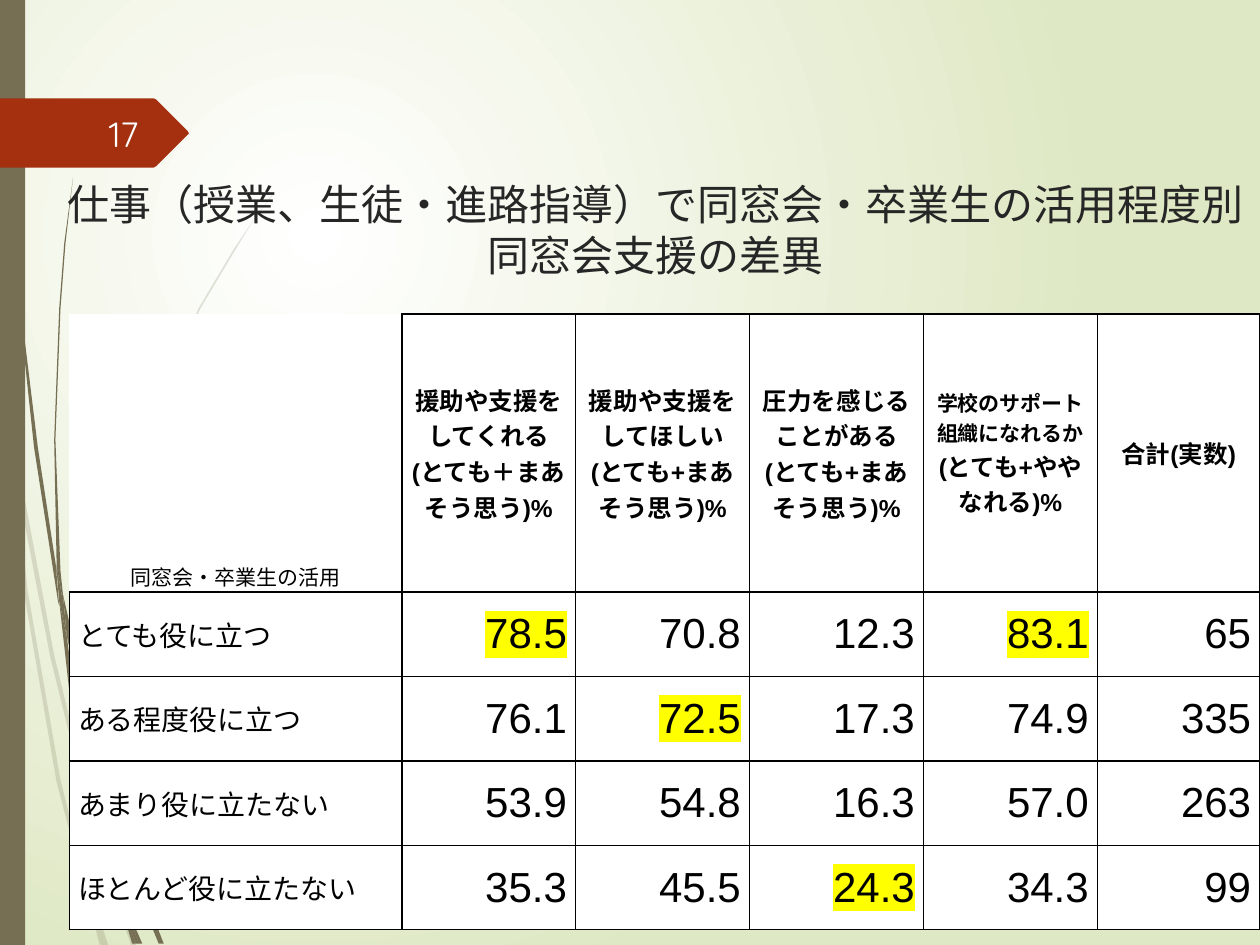
from lxml import etree
from pptx import Presentation
from pptx.dml.color import RGBColor
from pptx.enum import shapes, text
from pptx.oxml.ns import qn
from pptx.util import Pt

WHITE = RGBColor(0xFF, 0xFF, 0xFF)
BLACK = RGBColor(0x00, 0x00, 0x00)
PALE_GREEN = RGBColor(0xDF, 0xE8, 0xC4)
OLIVE = RGBColor(0x76, 0x6F, 0x54)
RUST = RGBColor(0xA5, 0x30, 0x10)
CHARCOAL = RGBColor(0x26, 0x26, 0x26)
NUMBER_WHITE = RGBColor(0xFE, 0xFF, 0xFF)
YELLOW = RGBColor(0xFF, 0xFF, 0x00)

GRID = Pt(0.72)  # outline points are counted in steps of 0.72 pt
FONT = "Arial"

PALE_WISPS = [
    [(8, 350), (6, 322), (0, 282), (0, 299), (7, 344)],
    [(40, 522), (59, 599), (59, 586), (43, 520), (10, 345), (12, 376)],
    [(64, 607), (61, 596), (61, 610), (85, 694), (104, 750), (108, 750), (88, 692)],
    [(83, 750), (86, 750), (73, 711)],
    [(64, 683), (48, 619), (22, 469), (12, 376), (8, 350), (19, 470), (45, 621),
     (64, 693), (70, 714), (69, 707)],
    [(58, 599), (60, 646), (64, 683), (67, 692), (73, 711), (72, 706), (63, 646),
     (61, 610), (61, 608)],
    [(61, 584), (76, 462), (111, 349), (159, 245), (187, 198), (201, 175), (217, 154),
     (217, 153), (201, 175), (186, 197), (158, 244), (110, 348), (75, 461), (59, 584),
     (59, 586), (61, 596)],
    [(70, 714), (79, 750), (82, 750)],
    [(61, 608), (61, 610), (61, 596), (59, 586), (58, 599)],
    [(67, 692), (65, 683), (69, 707), (70, 714), (82, 750), (83, 750), (73, 711)],
]
SOLID_WISPS = [
    [(5, 110), (14, 233), (27, 355), (46, 477), (47, 481), (45, 457), (45, 453), (30, 355),
     (15, 232), (6, 109), (4, 48), (3, 0), (2, 0), (3, 48)],
    [(73, 592), (88, 645), (88, 633), (88, 631), (77, 590), (50, 472), (53, 505)],
    [(94, 649), (91, 641), (91, 656), (109, 708), (126, 749), (130, 749), (113, 706)],
    [(91, 691), (81, 657), (60, 556), (53, 505), (47, 477), (56, 557), (77, 659),
     (92, 708), (97, 722), (96, 717)],
    [(50, 472), (48, 453), (44, 349), (48, 245), (52, 193), (58, 141), (51, 193),
     (47, 245), (43, 349), (45, 449), (49, 472)],
    [(110, 749), (113, 749), (100, 719)],
    [(47, 477), (53, 505), (50, 472), (49, 472), (45, 449), (45, 453)],
    [(91, 633), (103, 552), (131, 476), (169, 406), (191, 374), (203, 359), (216, 344),
     (215, 344), (203, 358), (191, 373), (168, 405), (129, 474), (101, 551), (88, 631),
     (91, 641)],
    [(97, 722), (105, 749), (108, 749)],
    [(88, 645), (91, 691), (96, 706), (100, 719), (100, 716), (91, 656), (90, 651)],
    [(88, 645), (90, 651), (91, 656), (91, 641), (88, 631), (88, 633)],
    [(96, 706), (91, 691), (96, 717), (97, 722), (108, 749), (110, 749), (100, 719)],
]
NUMBER_TAG = [(0, 0), (122, 0), (124, 1), (149, 26), (149.5, 27.5), (149, 29),
              (124, 54), (122, 55), (0, 55)]

HEADERS = [
    [("援助や支援をしてくれる\v(とても＋まあそう思う)%", 14)],
    [("援助や支援をしてほしい\v(とても+まあそう思う)%", 14)],
    [("圧力を感じることがある\v(とても+まあそう思う)%", 14)],
    [("学校のサポート組織になれるか\v", 12), ("(とても+ややなれる)%", 14)],
    [("合計(実数)", 14)],
]
ROWS = [
    ("とても役に立つ", "78.5", "70.8", "12.3", "83.1", "65"),
    ("ある程度役に立つ", "76.1", "72.5", "17.3", "74.9", "335"),
    ("あまり役に立たない", "53.9", "54.8", "16.3", "57.0", "263"),
    ("ほとんど役に立たない", "35.3", "45.5", "24.3", "34.3", "99"),
]
HIGHLIGHTED = {(1, 1), (1, 4), (2, 2), (4, 3)}


def paint(shape, color):
    shape.shadow.inherit = False
    shape.fill.solid()
    shape.fill.fore_color.rgb = color
    shape.line.fill.background()


def set_font(paragraph, size, color, name=FONT, bold=False):
    font = paragraph.font
    font.size, font.name, font.bold = Pt(size), name, bold
    font.color.rgb = color


def add_outline(slide, points, color, left=0, top=0, opacity=None):
    builder = slide.shapes.build_freeform(*points[0], scale=GRID)
    builder.add_line_segments(points[1:], close=True)
    shape = builder.convert_to_shape(Pt(left), Pt(top))
    paint(shape, color)
    if opacity is not None:
        rgb = shape.element.spPr.find(".//" + qn("a:srgbClr"))
        etree.SubElement(rgb, qn("a:alpha"), val=str(opacity * 1000))


def add_background(slide):
    """Radial gradient centred in the upper left quarter."""
    fill = slide.background.fill
    fill.gradient()
    for stop, color in zip(fill.gradient_stops, (WHITE, PALE_GREEN)):
        stop.color.rgb = color
    gradient = slide.element.find(".//" + qn("a:gradFill"))
    gradient.remove(gradient.find(qn("a:lin")))
    circle = etree.SubElement(gradient, qn("a:path"), path="circle")
    etree.SubElement(circle, qn("a:fillToRect"), l="50000", t="50000", r="100000", b="100000")


def add_left_decoration(slide, left, top, width, height):
    for points in PALE_WISPS:
        add_outline(slide, points, OLIVE, left, top, opacity=20)
    for points in SOLID_WISPS:
        add_outline(slide, points, OLIVE, left, top)
    bar = slide.shapes.add_shape(shapes.MSO_SHAPE.RECTANGLE,
                                 Pt(left), Pt(top), Pt(width), Pt(height))
    paint(bar, OLIVE)


def add_text(slide, box, content, alignment, anchor, size, color, name=FONT):
    frame = slide.shapes.add_textbox(*(Pt(length) for length in box)).text_frame
    frame.word_wrap = True
    frame.vertical_anchor = anchor
    paragraph = frame.paragraphs[0]
    paragraph.text = content
    paragraph.alignment = alignment
    set_font(paragraph, size, color, name)


def add_number_tag(slide, left, top):
    add_outline(slide, NUMBER_TAG, RUST, left, top)
    add_text(slide, (left + 40.3, top + 5.8, 46, 28.8), "17", text.PP_ALIGN.RIGHT,
             text.MSO_ANCHOR.MIDDLE, 20, NUMBER_WHITE, "Quicksand")


def set_borders(cell, hidden=()):
    properties = cell._tc.get_or_add_tcPr()
    for side in ("lnL", "lnR", "lnT", "lnB"):
        line = etree.SubElement(properties, qn("a:" + side), w=str(Pt(1)))
        if side in hidden:
            etree.SubElement(line, qn("a:noFill"))
        else:
            fill = etree.SubElement(line, qn("a:solidFill"))
            etree.SubElement(fill, qn("a:srgbClr"), val=str(BLACK))


def fill_cell(cell, runs, alignment, anchor=text.MSO_ANCHOR.MIDDLE, bold=False,
              hidden=(), highlighted=False):
    """Write (wording, size) runs into a white, bordered cell."""
    set_borders(cell, hidden)
    cell.fill.solid()
    cell.fill.fore_color.rgb = WHITE
    cell.margin_left = cell.margin_right = Pt(5)
    cell.margin_top = cell.margin_bottom = 0
    cell.vertical_anchor = anchor
    paragraph = cell.text_frame.paragraphs[0]
    paragraph.alignment = alignment
    set_font(paragraph, runs[0][1], BLACK, bold=bold)
    for wording, size in runs:
        lines = wording.split("\v")
        for index, line in enumerate(lines):
            if index:
                paragraph.add_line_break()
            if line:
                run = paragraph.add_run()
                run.text = line
                run.font.size = Pt(size)
    if highlighted:
        mark = etree.SubElement(run._r.get_or_add_rPr(), qn("a:highlight"))
        etree.SubElement(mark, qn("a:srgbClr"), val=str(YELLOW))


def add_support_table(slide, left, top, width, height):
    label_width, value_width, header_height = 190, 99.4, 159
    widths = [label_width] + [value_width] * 4 + [width - label_width - 4 * value_width]
    heights = [header_height] + [(height - header_height) / len(ROWS)] * len(ROWS)
    table = slide.shapes.add_table(len(heights), len(widths), Pt(left), Pt(top),
                                   Pt(width), Pt(height)).table
    table.first_row = table.horz_banding = False
    for column, length in zip(table.columns, widths):
        column.width = Pt(length)
    for row, length in zip(table.rows, heights):
        row.height = Pt(length)

    align = text.PP_ALIGN
    fill_cell(table.cell(0, 0), [("同窓会・卒業生の活用", 12)], align.CENTER,
              text.MSO_ANCHOR.BOTTOM, hidden=("lnL", "lnT"))
    for column, runs in enumerate(HEADERS, 1):
        fill_cell(table.cell(0, column), runs, align.CENTER, bold=True)
    for row, (label, *values) in enumerate(ROWS, 1):
        fill_cell(table.cell(row, 0), [(label, 16)], align.LEFT)
        for column, value in enumerate(values, 1):
            fill_cell(table.cell(row, column), [(value, 24)], align.RIGHT,
                      highlighted=(row, column) in HIGHLIGHTED)


def main():
    presentation = Presentation()
    presentation.slide_width, presentation.slide_height = Pt(720), Pt(540)
    slide = presentation.slides.add_slide(presentation.slide_layouts[6])
    add_background(slide)
    add_left_decoration(slide, 0, 0, 14.4, 540)
    add_number_tag(slide, 0, 56.16)
    add_text(slide, (14.4, 98.6, 720, 67.7),
             "仕事（授業、生徒・進路指導）で同窓会・卒業生の活用程度別\v同窓会支援の差異",
             text.PP_ALIGN.CENTER, text.MSO_ANCHOR.TOP, 24, CHARCOAL)
    add_support_table(slide, 39.6, 179.3, 680.4, 352)
    presentation.save("out.pptx")


if __name__ == "__main__":
    main()
